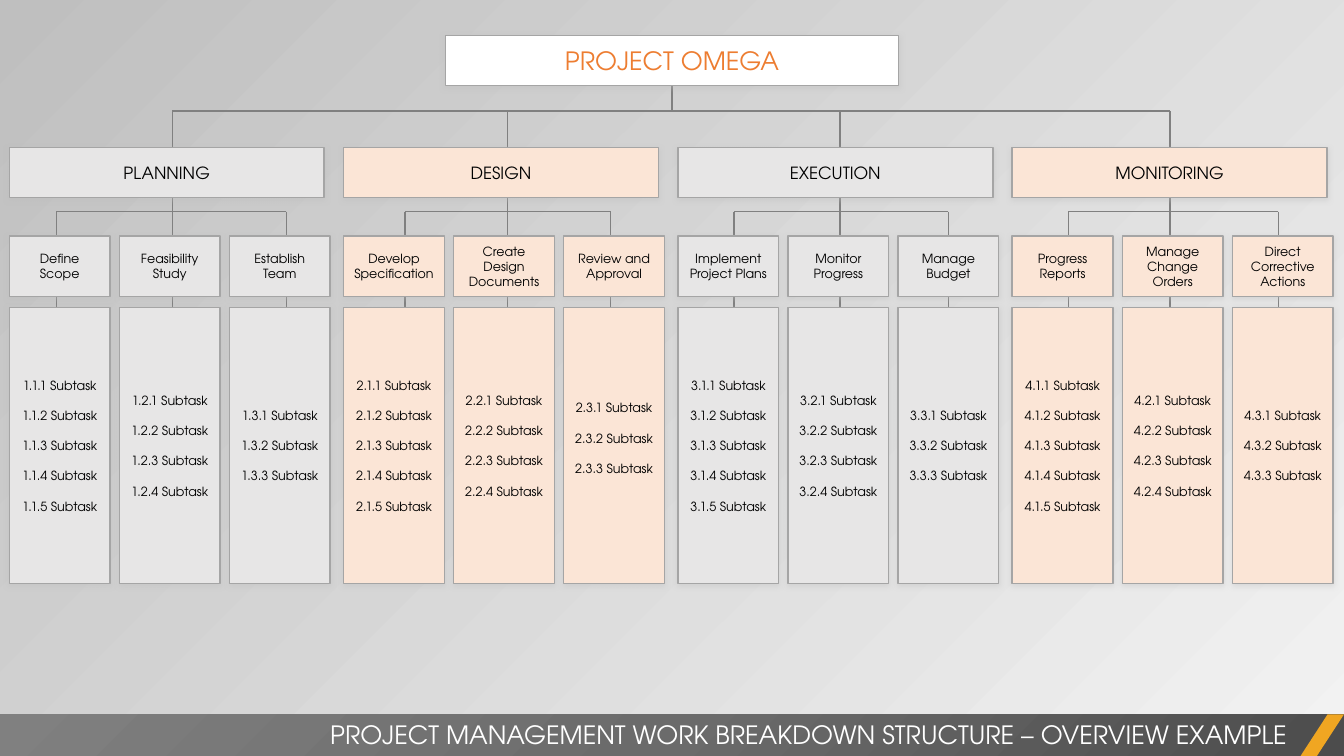
from lxml.etree import SubElement
from pptx import Presentation
from pptx.dml.color import RGBColor
from pptx.enum.shapes import MSO_CONNECTOR as Connector, MSO_SHAPE as Shape
from pptx.enum.text import MSO_ANCHOR as Anchor, PP_ALIGN as Align
from pptx.oxml import parse_xml
from pptx.oxml.ns import nsdecls, qn
from pptx.util import Inches, Pt

COLORS = {
    "white": "FFFFFF", "black": "000000", "orange": "ED7D31", "gold": "F0A622",
    "gray": "E7E6E6", "peach": "FBE5D6", "border": "A5A5A5", "line": "808080",
    "shadow": "BFBFBF", "light": "F2F2F2", "dark": "4C4C4C", "middle": "6B6B6B",
}
COLUMNS, ROWS = 160, 90
LEFT, BRANCH_STEP, TASK_STEP = 1.1, 39.8, 13.1
BUS_ROW, TASK_BUS_ROW, STEM_END = 13.2, 25.2, 39.9
SUBTASK_COUNTS = (5, 4, 3)
BRANCHES = [
    ("PLANNING", "gray", (6.7, 20.5, 34.1),
     ("Define Scope", "Feasibility Study", "Establish Team")),
    ("DESIGN", "peach", (48.2, 60.4, 72.7),
     ("Develop Specification", "Create Design Documents", "Review and Approval")),
    ("EXECUTION", "gray", (87.4, 100, 112.9),
     ("Implement Project Plans", "Monitor Progress", "Manage Budget")),
    ("MONITORING", "peach", (127.2, 139.3, 152.2),
     ("Progress Reports", "Manage Change Orders", "Direct Corrective Actions")),
]


class BreakdownSlide:
    """Draws boxes, lines and text on a slide grid of 160 columns by 90 rows."""

    font = "TeX Gyre Adventor"

    def __init__(self, presentation):
        self.slide = presentation.slides.add_slide(presentation.slide_layouts[6])
        self.column = presentation.slide_width / COLUMNS
        self.row = presentation.slide_height / ROWS

    def place(self, left, top, width, height):
        return (round(left * self.column), round(top * self.row),
                round(width * self.column), round(height * self.row))

    def color(self, name):
        return RGBColor.from_string(COLORS[name])

    def background(self, start, end, angle):
        fill = self.slide.background.fill
        fill.gradient()
        fill.gradient_angle = angle
        for stop, name in zip(fill.gradient_stops, (start, end)):
            stop.color.rgb = self.color(name)

    def line(self, left, top, right, bottom):
        start_x, start_y, end_x, end_y = self.place(left, top, right, bottom)
        line = self.slide.shapes.add_connector(
            Connector.STRAIGHT, start_x, start_y, end_x, end_y)
        line.line.color.rgb = self.color("line")
        line.line.width = Pt(1)
        SubElement(line._element.spPr, qn("a:effectLst"))

    def panel(self, kind, area, fill):
        shape = self.slide.shapes.add_shape(kind, *self.place(*area))
        shape.shadow.inherit = False
        shape.fill.solid()
        shape.fill.fore_color.rgb = self.color(fill)
        shape.line.fill.background()
        return shape

    def radial_panel(self, area, names):
        shape = self.panel(Shape.RECTANGLE, area, names[0])
        share = 100000 // (len(names) - 1)
        stops = "".join(
            f'<a:gs pos="{index * share}"><a:srgbClr val="{COLORS[name]}"/></a:gs>'
            for index, name in enumerate(names))
        gradient = parse_xml(
            f'<a:gradFill {nsdecls("a")}><a:gsLst>{stops}</a:gsLst><a:path path="circle">'
            '<a:fillToRect l="100000" t="100000"/></a:path></a:gradFill>')
        properties = shape._element.spPr
        properties.replace(properties.find(qn("a:solidFill")), gradient)

    def box(self, area, fill, lines, size, color="black", raised=0):
        shape = self.panel(Shape.RECTANGLE, area, fill)
        shape.line.color.rgb = self.color("border")
        shape.line.width = Pt(1)
        shape._element.spPr.find(qn("a:effectLst")).append(parse_xml(
            f'<a:outerShdw {nsdecls("a")} blurRad="{Pt(4)}" dist="{Pt(1)}" dir="5400000">'
            f'<a:srgbClr val="{COLORS["shadow"]}"><a:alpha val="40000"/></a:srgbClr>'
            '</a:outerShdw>'))
        shape.text_frame.vertical_anchor = Anchor.MIDDLE
        shape.text_frame.margin_bottom += round(2 * raised * self.row)
        self.fill_text(shape.text_frame, lines, size, color, Align.CENTER)

    def text(self, area, line, size, color, align):
        frame = self.slide.shapes.add_textbox(*self.place(*area)).text_frame
        self.fill_text(frame, [line], size, color, align)

    def fill_text(self, frame, lines, size, color, align):
        frame.word_wrap = True
        for index, line in enumerate(lines):
            paragraph = frame.add_paragraph() if index else frame.paragraphs[0]
            paragraph.text = line
            paragraph.alignment = align
            paragraph.font.name = self.font
            paragraph.font.size = Pt(size)
            paragraph.font.color.rgb = self.color(color)
            if index:
                paragraph.space_before = Pt(size * 1.2)


def draw_lines(page):
    centers = [stems[1] for _, _, stems, _ in BRANCHES]
    page.line(80, 7, 80, BUS_ROW)
    page.line(centers[0], BUS_ROW, centers[-1], BUS_ROW)
    for _, _, stems, _ in BRANCHES:
        page.line(stems[0], TASK_BUS_ROW, stems[-1], TASK_BUS_ROW)
        for stem, top in zip(stems, (TASK_BUS_ROW, BUS_ROW, TASK_BUS_ROW)):
            page.line(stem, top, stem, STEM_END)


def draw_boxes(page):
    page.box((53, 4.2, 54, 6), "white", ["PROJECT OMEGA"], 18, "orange")
    for branch, (title, fill, _, tasks) in enumerate(BRANCHES):
        branch_left = LEFT + branch * BRANCH_STEP
        page.box((branch_left, 17.55, 37.5, 6), fill, [title], 12)
        for index, (task, count) in enumerate(zip(tasks, SUBTASK_COUNTS)):
            left = branch_left + index * TASK_STEP
            subtasks = [f"{branch + 1}.{index + 1}.{number + 1} Subtask"
                        for number in range(count)]
            raised = 0.9 if task == "Review and Approval" else 0
            page.box((left, 28.1, 12, 7.2), fill, [task], 9)
            page.box((left, 36.6, 12, 32.9), fill, subtasks, 9, raised=raised)


def draw_footer(page):
    page.radial_panel((0, 85.05, COLUMNS, 5), ("dark", "middle", "line"))
    stripe = page.panel(Shape.PARALLELOGRAM, (154.8, 85.05, 5.2, 5), "gold")
    stripe.adjustments[0] = 0.65
    page.text((0, 85, 154.4, 4.8),
              "PROJECT MANAGEMENT WORK BREAKDOWN STRUCTURE – OVERVIEW EXAMPLE",
              18, "white", Align.RIGHT)


def main():
    presentation = Presentation()
    presentation.slide_width = Inches(13.33)
    presentation.slide_height = Inches(7.5)
    page = BreakdownSlide(presentation)
    page.background("light", "shadow", 135)
    draw_lines(page)
    draw_boxes(page)
    draw_footer(page)
    presentation.save("out.pptx")


if __name__ == "__main__":
    main()
